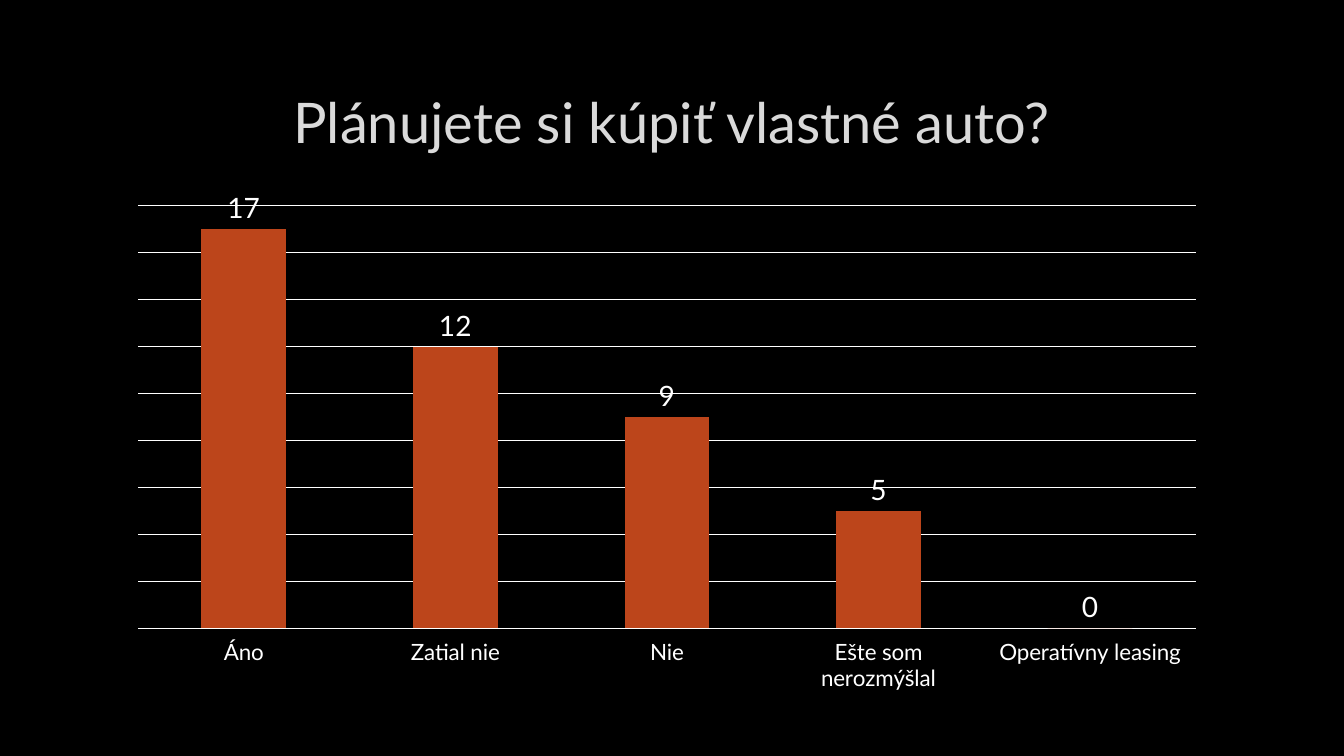
"""Build a slide with a column chart of answers to a car purchase survey."""
from dataclasses import dataclass

import pptx
import pptx.chart.chart
import pptx.chart.data
import pptx.dml.color
import pptx.enum.chart
import pptx.enum.text
import pptx.oxml
import pptx.oxml.ns
import pptx.slide
import pptx.text.text
import pptx.util
from pptx.util import Inches

BLACK = pptx.dml.color.RGBColor(0x00, 0x00, 0x00)
WHITE = pptx.dml.color.RGBColor(0xFF, 0xFF, 0xFF)
LIGHT_GREY = pptx.dml.color.RGBColor(0xDA, 0xDA, 0xDA)
RUST = pptx.dml.color.RGBColor(0xBC, 0x45, 0x1B)
FONT_NAME = "Lato"


@dataclass(frozen=True)
class Answer:
    label: str
    votes: int


ANSWERS = [
    Answer("Áno", 17),
    Answer("Zatial nie", 12),
    Answer("Nie", 9),
    Answer("Ešte som nerozmýšlal", 5),
    Answer("Operatívny leasing", 0),
]


def style_font(font: pptx.text.text.Font, size: int, color: pptx.dml.color.RGBColor) -> None:
    font.name = FONT_NAME
    font.size = pptx.util.Pt(size)
    font.bold = False
    font.color.rgb = color


def add_title(slide: pptx.slide.Slide, text: str) -> None:
    title = slide.shapes.add_textbox(Inches(1), Inches(0.67), Inches(11.32), Inches(1.06))
    text_frame = title.text_frame
    text_frame.word_wrap = True
    text_frame.vertical_anchor = pptx.enum.text.MSO_ANCHOR.MIDDLE
    text_frame.text = text
    paragraph = text_frame.paragraphs[0]
    paragraph.alignment = pptx.enum.text.PP_ALIGN.CENTER
    style_font(paragraph.runs[0].font, 40, LIGHT_GREY)


def place_plot(chart: pptx.chart.chart.Chart, x: float, y: float, w: float, h: float) -> None:
    plot_area = chart.plots[0]._element.getparent()
    for layout in plot_area.findall(pptx.oxml.ns.qn("c:layout")):
        plot_area.remove(layout)
    fractions = "".join(
        f'<c:{name} val="{value}"/>' for name, value in zip("xywh", (x, y, w, h))
    )
    layout = pptx.oxml.parse_xml(
        f'<c:layout {pptx.oxml.ns.nsdecls("c")}><c:manualLayout>'
        '<c:layoutTarget val="inner"/><c:xMode val="edge"/><c:yMode val="edge"/>'
        f"{fractions}</c:manualLayout></c:layout>"
    )
    plot_area.insert(0, layout)


def add_answer_chart(slide: pptx.slide.Slide, answers: list[Answer]) -> None:
    chart_data = pptx.chart.data.CategoryChartData()
    chart_data.categories = [answer.label for answer in answers]
    chart_data.add_series("Series 1", [answer.votes for answer in answers])
    chart = slide.shapes.add_chart(
        pptx.enum.chart.XL_CHART_TYPE.COLUMN_CLUSTERED,
        Inches(1.15), Inches(1.89), Inches(10.93), Inches(5.05), chart_data,
    ).chart
    chart.has_title = False
    chart.has_legend = False
    style_font(chart.font, 10, WHITE)
    place_plot(chart, 0.02, 0.03, 0.96, 0.83)

    plot = chart.plots[0]
    plot.gap_width = 150
    plot.vary_by_categories = False
    series = plot.series[0]
    series.format.fill.solid()
    series.format.fill.fore_color.rgb = RUST
    labels = series.data_labels
    labels.show_value = True
    labels.position = pptx.enum.chart.XL_LABEL_POSITION.OUTSIDE_END
    style_font(labels.font, 20, WHITE)

    category_axis = chart.category_axis
    category_axis.format.line.fill.background()
    style_font(category_axis.tick_labels.font, 16, WHITE)

    value_axis = chart.value_axis
    value_axis.minimum_scale = 0
    value_axis.maximum_scale = 18
    value_axis.major_unit = 2
    value_axis.visible = False
    value_axis.has_major_gridlines = True
    grid_line = value_axis.major_gridlines.format.line
    grid_line.color.rgb = WHITE
    grid_line.width = pptx.util.Pt(0.75)


def main() -> None:
    presentation = pptx.Presentation()
    presentation.slide_width = Inches(13.33)
    presentation.slide_height = Inches(7.5)
    slide = presentation.slides.add_slide(presentation.slide_layouts[6])
    slide.background.fill.solid()
    slide.background.fill.fore_color.rgb = BLACK
    add_title(slide, "Plánujete si kúpiť vlastné auto?")
    add_answer_chart(slide, ANSWERS)
    presentation.save("out.pptx")


if __name__ == "__main__":
    main()
